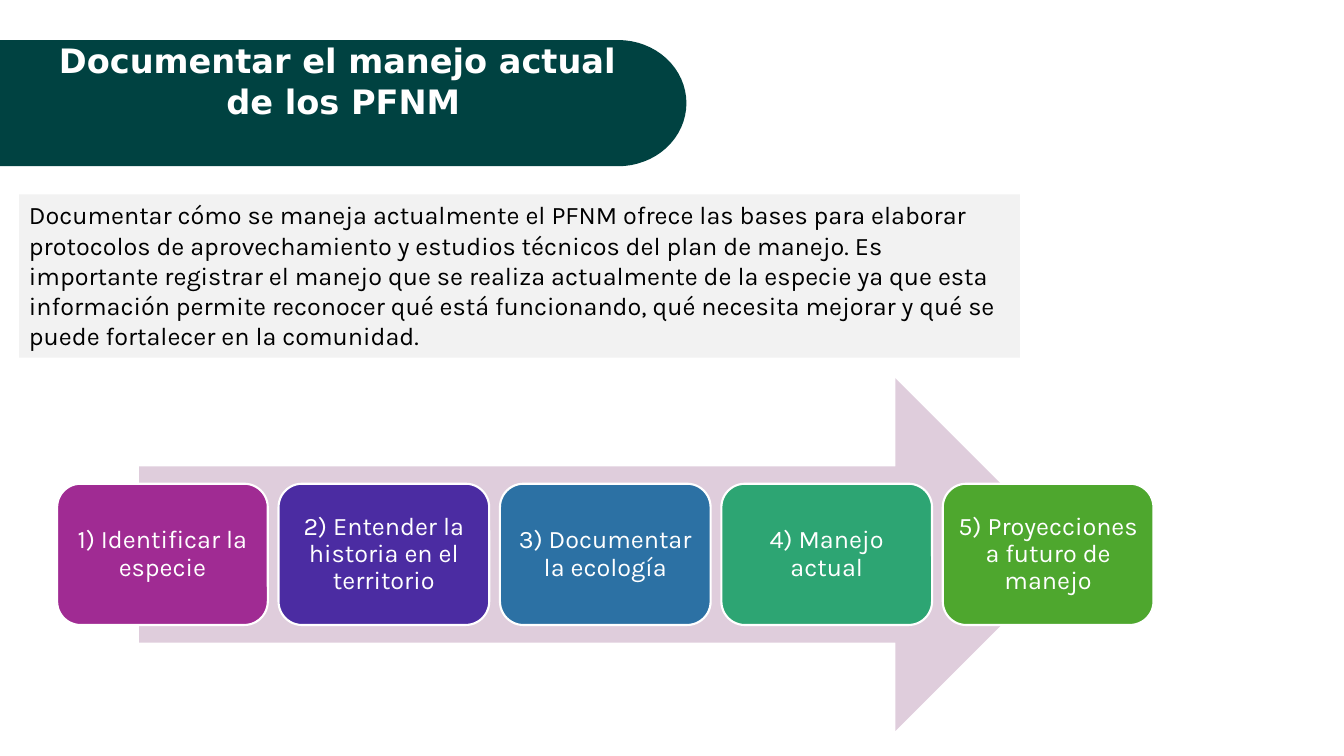
from dataclasses import dataclass
from math import cos, pi, sin
from typing import Any

from lxml.etree import SubElement
from pptx import Presentation
from pptx.dml.color import RGBColor
from pptx.enum.shapes import MSO_SHAPE
from pptx.enum.text import MSO_ANCHOR, MSO_AUTO_SIZE, PP_ALIGN
from pptx.oxml.ns import qn
from pptx.shapes.autoshape import Shape
from pptx.slide import Slide
from pptx.util import Cm, Pt

COLORS = {
    "banner": "004241",
    "panel": "F2F2F2",
    "arrow": "DFCDDC",
    "white": "FFFFFF",
    "black": "000000",
    "purple": "A02B93",
    "indigo": "4B2CA2",
    "blue": "2C71A4",
    "teal": "2DA573",
    "green": "4EA72E",
}

TITLE_LINES = ["Documentar el manejo actual ", "de los PFNM"]
INTRODUCTION = (
    "Documentar cómo se maneja actualmente el PFNM ofrece las bases para elaborar "
    "protocolos de aprovechamiento y estudios técnicos del plan de manejo. Es importante "
    "registrar el manejo que se realiza actualmente de la especie ya que esta información "
    "permite reconocer qué está funcionando, qué necesita mejorar y qué se puede "
    "fortalecer en la comunidad."
)

BANNER_TOP, BANNER_WIDTH, BANNER_HEIGHT = 1.01, 17.3, 3.18
CAP_WIDTH = 1.72
CAP_SEGMENTS = 32
STEP_LEFT, STEP_TOP, STEP_WIDTH, STEP_HEIGHT = 1.44, 12.19, 5.31, 3.56
STEP_PITCH = 5.58


@dataclass
class Step:
    text: str
    color: str


@dataclass
class TextStyle:
    font: dict[str, Any]
    color: str
    paragraph: dict[str, Any]
    frame: dict[str, Any]


STEPS = [
    Step("1) Identificar la especie", "purple"),
    Step("2) Entender la historia en el territorio", "indigo"),
    Step("3) Documentar la ecología", "blue"),
    Step("4) Manejo actual", "teal"),
    Step("5) Proyecciones a futuro de manejo", "green"),
]


def margins(horizontal: float, vertical: float) -> dict[str, Any]:
    return {
        "margin_left": Cm(horizontal),
        "margin_right": Cm(horizontal),
        "margin_top": Cm(vertical),
        "margin_bottom": Cm(vertical),
        "word_wrap": True,
        "auto_size": MSO_AUTO_SIZE.NONE,
    }


TITLE_STYLE = TextStyle(
    {"name": "DejaVu Sans", "size": Pt(24), "bold": True},
    "white",
    {"alignment": PP_ALIGN.CENTER},
    margins(0, 0) | {"vertical_anchor": MSO_ANCHOR.TOP},
)
BODY_STYLE = TextStyle(
    {"name": "Karla", "size": Pt(18)},
    "black",
    {"alignment": PP_ALIGN.LEFT, "space_before": Pt(0)},
    margins(0.25, 0.13) | {"vertical_anchor": MSO_ANCHOR.TOP},
)
STEP_STYLE = TextStyle(
    {"name": "Karla", "size": Pt(18)},
    "white",
    {"alignment": PP_ALIGN.CENTER, "line_spacing": 0.9},
    margins(0.18, 0.18) | {"vertical_anchor": MSO_ANCHOR.MIDDLE},
)


def apply_format(target: Any, values: dict[str, Any]) -> None:
    for name, value in values.items():
        setattr(target, name, value)


def place(shape: Shape, left: float, top: float, width: float, height: float) -> None:
    apply_format(shape, {"left": Cm(left), "top": Cm(top), "width": Cm(width), "height": Cm(height)})


def paint(shape: Shape, color: str) -> None:
    shape.fill.solid()
    shape.fill.fore_color.rgb = RGBColor.from_string(COLORS[color])
    shape.line.fill.background()


def write(shape: Shape, lines: list[str], style: TextStyle) -> None:
    frame = shape.text_frame
    frame.text = "\n".join(lines)
    apply_format(frame, style.frame)
    for paragraph in frame.paragraphs:
        apply_format(paragraph, style.paragraph)
        for run in paragraph.runs:
            apply_format(run.font, style.font)
            run.font.color.rgb = RGBColor.from_string(COLORS[style.color])


def draw_banner(slide: Slide) -> None:
    radius = BANNER_HEIGHT / 2
    cap_left = BANNER_WIDTH - CAP_WIDTH
    angles = [pi * index / CAP_SEGMENTS - pi / 2 for index in range(CAP_SEGMENTS + 1)]
    cap = [
        (Cm(cap_left + CAP_WIDTH * cos(angle)), Cm(BANNER_TOP + radius * (1 + sin(angle))))
        for angle in angles
    ]
    builder = slide.shapes.build_freeform(0, Cm(BANNER_TOP))
    builder.add_line_segments(cap + [(0, Cm(BANNER_TOP + BANNER_HEIGHT))], close=True)
    banner = builder.convert_to_shape()
    banner.shadow.inherit = False
    paint(banner, "banner")
    slide.shapes._spTree.insert(2, banner._element)


def draw_introduction(slide: Slide) -> None:
    body = slide.placeholders[1]
    place(body, 0.48, 4.9, 25.22, 4.11)
    paint(body, "panel")
    write(body, [INTRODUCTION], BODY_STYLE)
    properties = body.text_frame.paragraphs[0]._p.get_or_add_pPr()
    properties.set("marL", "0")
    properties.set("indent", "0")
    SubElement(properties, qn("a:buNone"))


def draw_shape(
    slide: Slide, kind: MSO_SHAPE, color: str, left: float, top: float, width: float, height: float
) -> Shape:
    shape = slide.shapes.add_shape(kind, Cm(left), Cm(top), Cm(width), Cm(height))
    shape.shadow.inherit = False
    paint(shape, color)
    return shape


def draw_step(slide: Slide, step: Step, position: int) -> None:
    left = STEP_LEFT + position * STEP_PITCH
    box = draw_shape(
        slide, MSO_SHAPE.ROUNDED_RECTANGLE, step.color, left, STEP_TOP, STEP_WIDTH, STEP_HEIGHT
    )
    box.line.color.rgb = RGBColor.from_string(COLORS["white"])
    box.line.width = Pt(1.5)
    write(box, [step.text], STEP_STYLE)


def main() -> None:
    presentation = Presentation()
    apply_format(presentation, {"slide_width": Cm(33.87), "slide_height": Cm(19.05)})
    slide = presentation.slides.add_slide(presentation.slide_layouts[1])

    draw_banner(slide)
    title = slide.shapes.title
    place(title, 0, BANNER_TOP, BANNER_WIDTH, BANNER_HEIGHT)
    write(title, TITLE_LINES, TITLE_STYLE)
    draw_introduction(slide)

    draw_shape(slide, MSO_SHAPE.RIGHT_ARROW, "arrow", 3.51, 9.53, 23.5, 8.89)
    for position, step in enumerate(STEPS):
        draw_step(slide, step, position)

    presentation.save("out.pptx")


if __name__ == "__main__":
    main()
